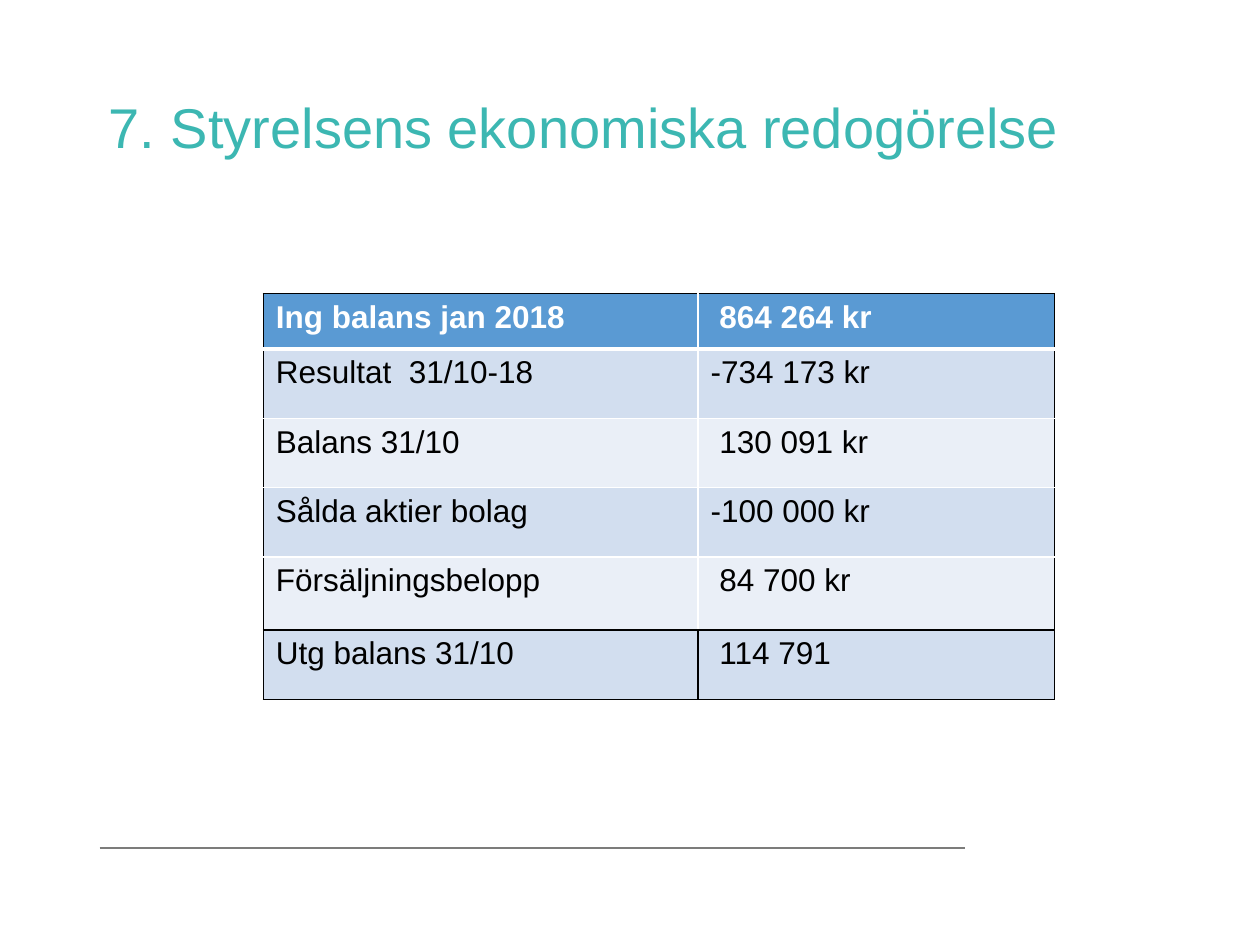
from lxml.etree import SubElement
from pptx import Presentation
from pptx.dml.color import RGBColor
from pptx.enum.shapes import MSO_CONNECTOR
from pptx.enum.text import MSO_ANCHOR, PP_ALIGN
from pptx.oxml.ns import qn
from pptx.util import Inches, Pt

# Content
TITLE = " 7. Styrelsens ekonomiska redogörelse"
BALANCE_ROWS = [
    ("Ing balans jan 2018", " 864 264 kr"),
    ("Resultat  31/10-18", "-734 173 kr"),
    ("Balans 31/10", " 130 091 kr"),
    ("Sålda aktier bolag", "-100 000 kr"),
    ("Försäljningsbelopp", " 84 700 kr"),
    ("Utg balans 31/10", " 114 791"),
]
COLUMN_WIDTHS = [3.45, 2.83]
ROW_HEIGHTS = [0.44, 0.55, 0.55, 0.55, 0.58, 0.55]
COLORS = {
    "title": "3CB7B2",
    "rule": "7C7C7B",
    "header": "5A9AD3",
    "odd": "D2DEEF",
    "even": "EAEFF7",
    "white": "FFFFFF",
    "black": "000000",
}
FONT = "Arial"


def color(name):
    return RGBColor.from_string(COLORS[name])


def add_text(paragraph, text, size, color_name, bold=False):
    span = paragraph.add_run()
    span.text = text
    span.font.name = FONT
    span.font.size = Pt(size)
    span.font.bold = bold
    span.font.color.rgb = color(color_name)


def set_borders(cell, borders):
    """Draw the cell edges; they must precede the fill in the XML."""
    properties = cell._tc.get_or_add_tcPr()
    for side, (color_name, width) in borders.items():
        edge = SubElement(properties, qn(f"a:ln{side}"), w=str(Pt(width)))
        fill = SubElement(edge, qn("a:solidFill"))
        SubElement(fill, qn("a:srgbClr"), val=COLORS[color_name])


def cell_borders(row, column):
    """Black outer frame and last row, white inner grid, thick header rule."""
    last = len(BALANCE_ROWS) - 1
    inner = "black" if row == last else "white"
    return {
        "L": ("black" if column == 0 else inner, 1),
        "R": (inner if column == 0 else "black", 1),
        "T": ("black" if row in (0, last) else "white", 3 if row == 1 else 1),
        "B": ("black" if row >= last - 1 else "white", 3 if row == 0 else 1),
    }


deck = Presentation()
deck.slide_width, deck.slide_height = Inches(10), Inches(7.5)
page = deck.slides.add_slide(deck.slide_layouts[5])

# Footer rule
rule = page.shapes.add_connector(
    MSO_CONNECTOR.STRAIGHT, Inches(0.79), Inches(6.73), Inches(7.66), Inches(6.73))
rule.line.color.rgb = color("rule")
rule.line.width = Pt(0.75)
SubElement(rule._element.spPr, qn("a:effectLst"))

# Title
title = page.shapes.title
title.left, title.top = Inches(0.64), Inches(0.58)
title.width, title.height = Inches(8.79), Inches(1.7)
title.text_frame.vertical_anchor = MSO_ANCHOR.TOP
heading = title.text_frame.paragraphs[0]
heading.alignment = PP_ALIGN.LEFT
heading.line_spacing = Pt(46)
add_text(heading, TITLE, 32, "title")

# Balance table
table = page.shapes.add_table(
    len(BALANCE_ROWS), len(COLUMN_WIDTHS), Inches(2.09), Inches(2.33),
    Inches(sum(COLUMN_WIDTHS)), Inches(sum(ROW_HEIGHTS))).table
for column, width in zip(table.columns, COLUMN_WIDTHS):
    column.width = Inches(width)
for row, height in zip(table.rows, ROW_HEIGHTS):
    row.height = Inches(height)

for r, texts in enumerate(BALANCE_ROWS):
    is_header = r == 0
    band = "header" if is_header else "odd" if r % 2 else "even"
    for c, text in enumerate(texts):
        cell = table.cell(r, c)
        set_borders(cell, cell_borders(r, c))
        cell.fill.solid()
        cell.fill.fore_color.rgb = color(band)
        add_text(cell.text_frame.paragraphs[0], text, 18,
                 "white" if is_header else "black", is_header)

deck.save("out.pptx")
